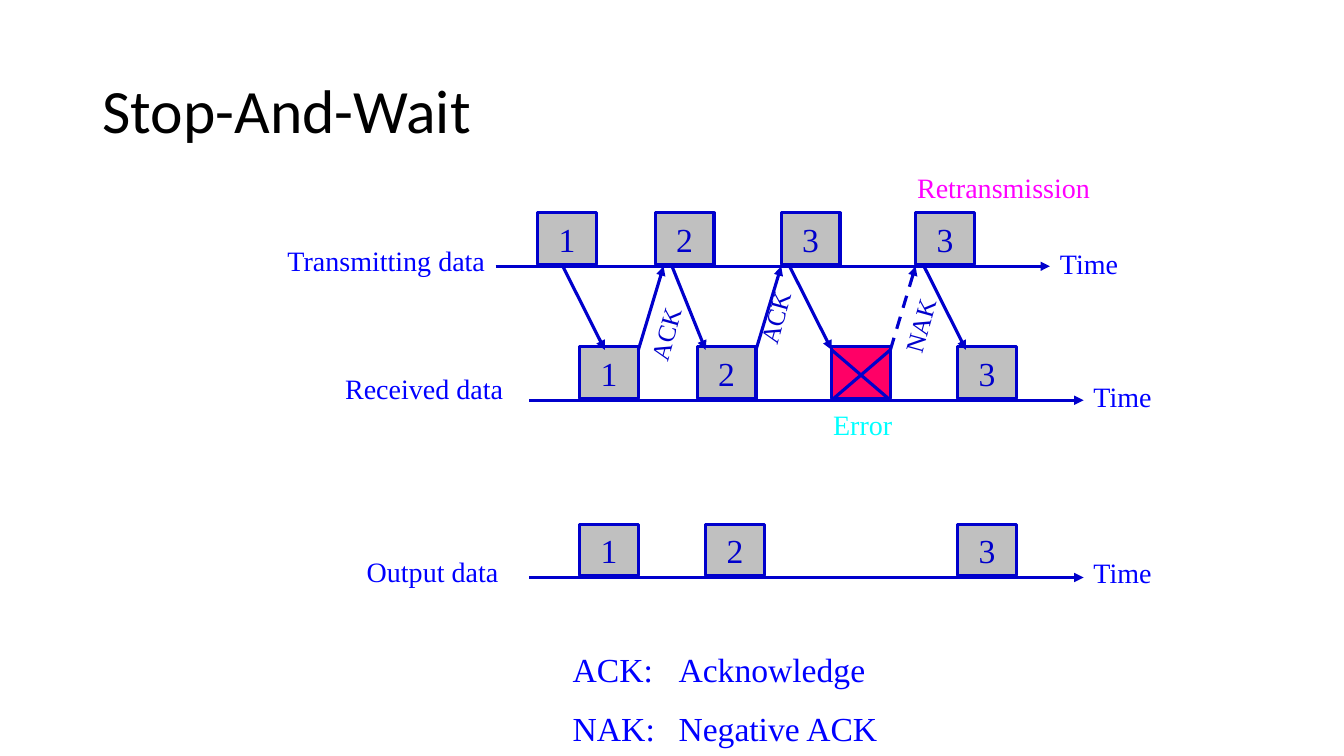
from lxml import etree
from pptx import Presentation
from pptx import util as u
from pptx.dml.color import RGBColor
from pptx.enum import dml, shapes, text
from pptx.oxml.ns import qn

COLS, ROWS = 160, 90
WIDTH, HEIGHT = u.Inches(13.33), u.Inches(7.5)
BOX_W, BOX_H = 7, 6.15
NAVY, BLUE, GREY, RED = "0000CC", "0000FF", "C0C0C0", "FF0066"
SERIF = "Times New Roman"
SEND, RECEIVE, OUTPUT = 31.7, 47.65, 68.75


def color(value):
    return RGBColor.from_string(value)


def x(cols):
    return round(WIDTH * cols / COLS)


def y(rows):
    return round(HEIGHT * rows / ROWS)


def add_run(p, content, size, hue, font=SERIF):
    r = p.add_run()
    r.text = content
    r.font.size = u.Pt(size)
    r.font.name = font
    r.font.color.rgb = color(hue)


def add_title(s, content):
    sp = s.shapes.title
    sp.left, sp.top, sp.width, sp.height = x(11), y(4.8), x(138), y(17.4)
    sp.text_frame.vertical_anchor = text.MSO_ANCHOR.MIDDLE
    p = sp.text_frame.paragraphs[0]
    p.alignment = text.PP_ALIGN.LEFT
    p.line_spacing = 0.9
    add_run(p, content, 44, "000000", "Calibri")


def add_label(s, content, left, top, width, height=5.3, size=20, hue=BLUE,
              align=text.PP_ALIGN.LEFT, rotation=0):
    sp = s.shapes.add_textbox(x(left), y(top), x(width), y(height))
    sp.rotation = rotation
    tf = sp.text_frame
    tf.word_wrap = True
    p = tf.paragraphs[0]
    p.alignment = align
    add_run(p, content, size, hue)


def add_line(s, start, end, arrow=True, dashed=False):
    sp = s.shapes.add_connector(shapes.MSO_CONNECTOR.STRAIGHT,
                                x(start[0]), y(start[1]), x(end[0]), y(end[1]))
    sp.line.color.rgb = color(NAVY)
    sp.line.width = u.Pt(2.25)
    if dashed:
        sp.line.dash_style = dml.MSO_LINE.DASH
    if arrow:
        etree.SubElement(sp.line._get_or_add_ln(), qn("a:tailEnd"), type="triangle")
    etree.SubElement(sp._element.spPr, qn("a:effectLst"))


def add_frame(s, left, axis, number="", fill=GREY):
    sp = s.shapes.add_shape(shapes.MSO_SHAPE.RECTANGLE,
                            x(left), y(axis - 6.35), x(BOX_W), y(BOX_H))
    sp.shadow.inherit = False
    sp.fill.solid()
    sp.fill.fore_color.rgb = color(fill)
    sp.line.color.rgb = color(NAVY)
    sp.line.width = u.Pt(2.25)
    if number:
        p = sp.text_frame.paragraphs[0]
        p.alignment = text.PP_ALIGN.CENTER
        add_run(p, number, 24, NAVY)


def add_timeline(s, name, label_box, start, axis, time_top, frames):
    add_line(s, (start, axis), (start + 66, axis))
    add_label(s, name, *label_box, align=text.PP_ALIGN.CENTER)
    add_label(s, "Time", start + 66, time_top, 11)
    for left, number in frames:
        add_frame(s, left, axis, number)


def add_legend(s, entries):
    sp = s.shapes.add_textbox(x(67), y(76.7), x(51), y(13.3))
    tf = sp.text_frame
    tf.word_wrap = True
    for i, (short, meaning) in enumerate(entries):
        p = tf.add_paragraph() if i else tf.paragraphs[0]
        p.space_before = u.Pt(13 if i else 0)
        tabs = etree.SubElement(p._p.get_or_add_pPr(), qn("a:tabLst"))
        etree.SubElement(tabs, qn("a:tab"), pos=str(u.Inches(1.05)), algn="l")
        add_run(p, f"{short}:\t{meaning}", 24, BLUE)


def main():
    prs = Presentation()
    prs.slide_width, prs.slide_height = WIDTH, HEIGHT
    s = prs.slides.add_slide(prs.slide_layouts[5])
    add_title(s, "Stop-And-Wait")

    add_timeline(s, "Transmitting data", (33, 28.4, 26), 59, SEND, 28.8,
                 [(64, "1"), (78, "2"), (93, "3"), (109, "3")])
    add_timeline(s, "Received data", (38, 43.6, 25), 63, RECEIVE, 44.6,
                 [(69, "1"), (83, "2"), (114, "3")])
    add_timeline(s, "Output data", (41, 65.4, 21), 63, OUTPUT, 65.6,
                 [(69, "1"), (84, "2"), (114, "3")])

    error_left, error_right = 99, 99 + BOX_W
    top = RECEIVE - 6
    add_frame(s, error_left, RECEIVE, fill=RED)
    add_line(s, (error_right, top), (error_left, RECEIVE), arrow=False)
    add_line(s, (error_left, top), (error_right, RECEIVE), arrow=False)

    for sent, received in [(67, 72), (80, 84), (94, 99), (110, 115)]:
        add_line(s, (sent, SEND), (received, top))
    for reply, dashed in [(76, False), (90, False), (106, True)]:
        add_line(s, (reply, top), (reply + 3, SEND), dashed=dashed)
    for word, left, row, width in [("ACK", 74.2, 36.5, 10.5),
                                   ("ACK", 87.6, 35, 9.5),
                                   ("NAK", 104.8, 36, 9.6)]:
        add_label(s, word, left, row, width, 4.8, 18, NAVY, rotation=285.5)

    add_label(s, "Error", 98, 47.9, 11, hue="00FFFF")
    add_label(s, "Retransmission", 108, 19.7, 26, hue="FF00FF")
    add_legend(s, [("ACK", "Acknowledge"), ("NAK", "Negative ACK")])
    prs.save("out.pptx")


if __name__ == "__main__":
    main()
